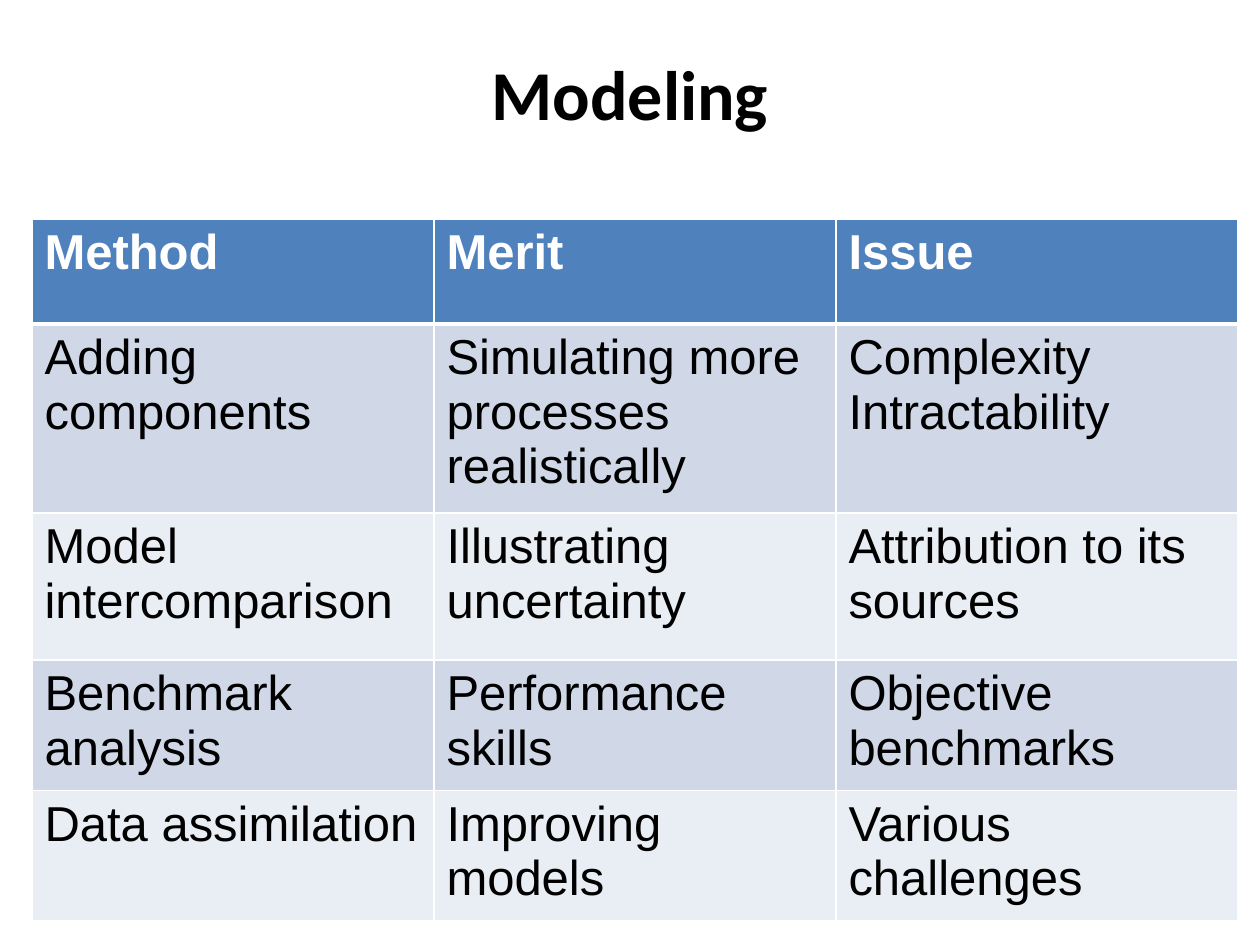
from lxml import etree
from pptx import Presentation, util as u
from pptx.dml.color import RGBColor
from pptx.enum import text
from pptx.oxml.ns import qn

PX = 914400 // 126
HUES = {"head": "4F81BD", "odd": "D0D8E8", "even": "E9EDF4",
        "white": "FFFFFF", "black": "000000"}
ROWS = [
    ("Method", "Merit", "Issue"),
    ("Adding components", "Simulating more processes realistically",
     "Complexity Intractability"),
    ("Model intercomparison", "Illustrating uncertainty",
     "Attribution to its sources"),
    ("Benchmark analysis", "Performance skills", "Objective benchmarks"),
    ("Data assimilation", "Improving models", "Various challenges"),
]
HIGHS = [105, 176, 147, 121, 121]
WIDE = 402


def add_run(para, words, face, size, hue, bold):
    run = para.add_run()
    run.text = words
    run.font.name = face
    run.font.size = u.Pt(size)
    run.font.bold = bold
    run.font.color.rgb = RGBColor.from_string(HUES[hue])


def add_edge(cell, side, width):
    """Draw a white border; call before the fill is set, as the schema orders."""
    line = etree.SubElement(cell._tc.get_or_add_tcPr(), qn("a:" + side),
                            w=str(u.Pt(width)))
    fill = etree.SubElement(line, qn("a:solidFill"))
    etree.SubElement(fill, qn("a:srgbClr"), val=HUES["white"])


deck = Presentation()
deck.slide_width, deck.slide_height = u.Inches(10), u.Inches(7.5)
slide = deck.slides.add_slide(deck.slide_layouts[6])

title = slide.shapes.add_textbox(21 * PX, 38 * PX, 1218 * PX, 110 * PX)
frame = title.text_frame
frame.word_wrap = True
frame.vertical_anchor = text.MSO_ANCHOR.MIDDLE
para = frame.paragraphs[0]
para.alignment = text.PP_ALIGN.CENTER
add_run(para, "Modeling", "Calibri", 40, "black", True)

table = slide.shapes.add_table(len(ROWS), 3, 32 * PX, 219 * PX,
                               3 * WIDE * PX, sum(HIGHS) * PX).table
for col in table.columns:
    col.width = WIDE * PX
for r, (high, row) in enumerate(zip(HIGHS, ROWS)):
    table.rows[r].height = high * PX
    head = r == 0
    hue = "head" if head else ("even", "odd")[r % 2]
    for c, words in enumerate(row):
        cell = table.cell(r, c)
        for side in ("lnL", "lnR", "lnT", "lnB"):
            thick = (head and side == "lnB") or (r == 1 and side == "lnT")
            add_edge(cell, side, 3 if thick else 1)
        cell.fill.solid()
        cell.fill.fore_color.rgb = RGBColor.from_string(HUES[hue])
        add_run(cell.text_frame.paragraphs[0], words, "Arial", 28,
                "white" if head else "black", head)

deck.save("out.pptx")
